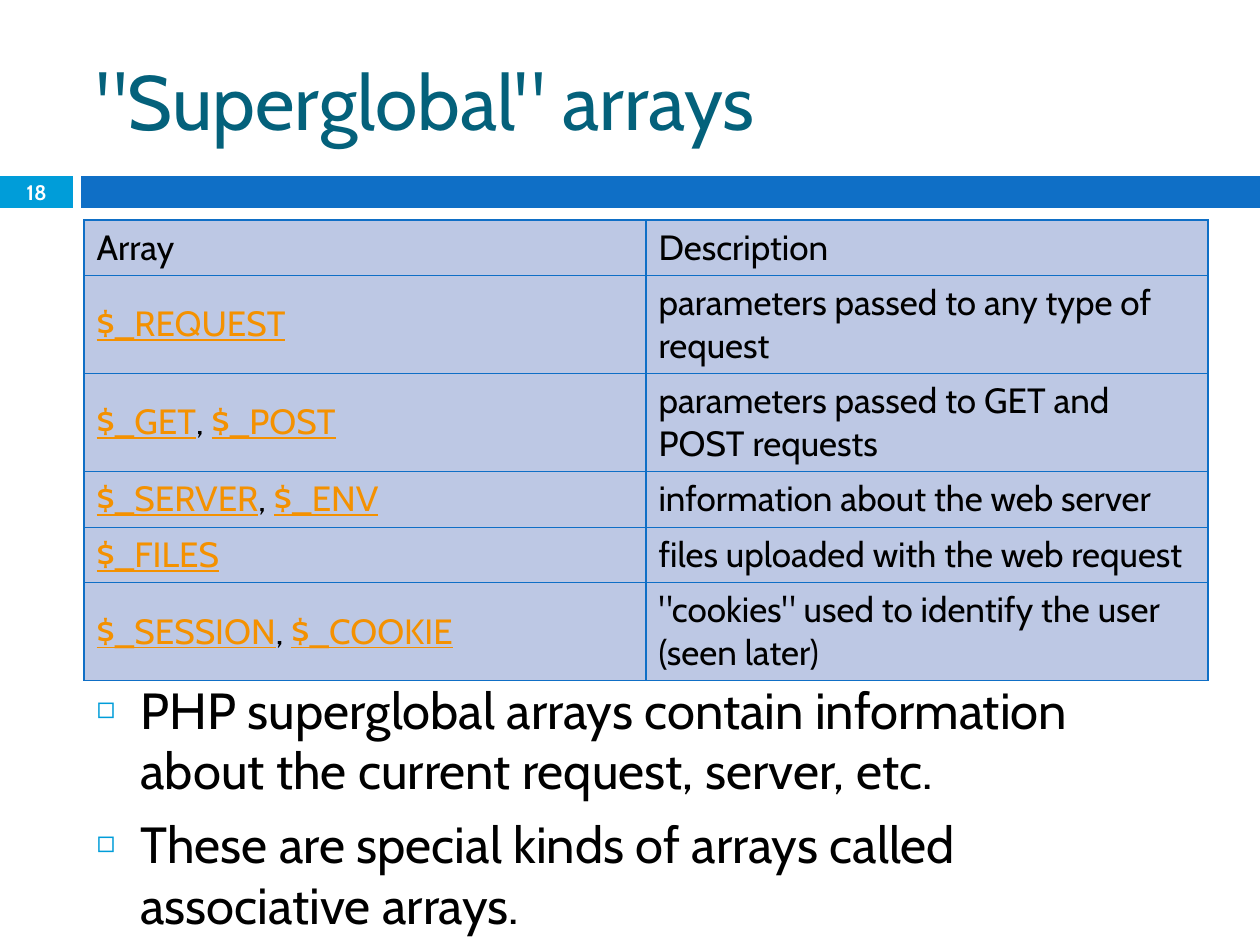
from lxml import etree
from pptx import Presentation
from pptx.dml.color import RGBColor
from pptx.enum.shapes import MSO_SHAPE
from pptx.enum.text import MSO_ANCHOR, MSO_AUTO_SIZE, PP_ALIGN
from pptx.oxml.ns import qn
from pptx.util import Emu, Pt

RECTANGLE = MSO_SHAPE.RECTANGLE
TOP, MIDDLE = MSO_ANCHOR.TOP, MSO_ANCHOR.MIDDLE
LEFT, CENTER = PP_ALIGN.LEFT, PP_ALIGN.CENTER
NO_AUTOFIT = MSO_AUTO_SIZE.NONE
FONT = "Cabin"
COLORS = {
    "title": "04617B",
    "text": "000000",
    "link": "F49100",
    "badge": "009DD9",
    "band": "0F6FC6",
    "cell": "BDC8E4",
    "white": "FFFFFF",
}
ROWS = [
    (["Array"], "Description"),
    (["$_REQUEST"], "parameters passed to any type of request"),
    (["$_GET", "$_POST"], "parameters passed to GET and POST requests"),
    (["$_SERVER", "$_ENV"], "information about the web server"),
    (["$_FILES"], "files uploaded with the web request"),
    (["$_SESSION", "$_COOKIE"], "\"cookies\" used to identify the user (seen later)"),
]
ROW_HEIGHTS = [55, 98, 98, 56, 55, 98]
POINTS = [
    "PHP superglobal arrays contain information about the current request, server, etc.",
    "These are special kinds of arrays called associative arrays.",
]


def px(value):
    """Turn pixels at 126 to the inch into EMU."""
    return Emu(round(value * 914400 / 126))


def color(name):
    """Look up a named colour."""
    return RGBColor.from_string(COLORS[name])


def style(span, size, tint, bold=False, underline=False):
    """Format one run."""
    span.font.name = FONT
    span.font.size = Pt(size)
    span.font.bold = bold
    span.font.underline = underline
    span.font.color.rgb = color(tint)


def place(shape, box):
    """Move a placeholder to a box given in pixels."""
    shape.left, shape.top, shape.width, shape.height = map(px, box)
    shape.text_frame.auto_size = NO_AUTOFIT
    shape.text_frame.word_wrap = True


def add_title(page, box):
    """Fill the title placeholder."""
    title = page.shapes.title
    place(title, box)
    title.text_frame.text = "\"Superglobal\" arrays"
    title.text_frame.vertical_anchor = MIDDLE
    para = title.text_frame.paragraphs[0]
    para.alignment = LEFT
    style(para.runs[0], 44, "title")


def add_bar(page, box, tint):
    """Draw one plain filled bar."""
    bar = page.shapes.add_shape(RECTANGLE, *map(px, box))
    bar.shadow.inherit = False
    bar.fill.solid()
    bar.fill.fore_color.rgb = color(tint)
    bar.line.fill.background()
    return bar


def add_band(page, box):
    """Draw the page-number badge and the band beside it."""
    left, top, width, height = box
    badge_width, gap = 73, 8
    offset = badge_width + gap
    badge = add_bar(page, (left, top, badge_width, height), "badge")
    add_bar(page, (left + offset, top, width - offset, height), "band")
    frame = badge.text_frame
    frame.margin_top = frame.margin_bottom = 0
    frame.vertical_anchor = MIDDLE
    frame.text = "18"
    frame.paragraphs[0].alignment = CENTER
    style(frame.paragraphs[0].runs[0], 12, "white", bold=True)


def add_borders(cell):
    """Outline all four sides of a table cell."""
    properties = cell._tc.get_or_add_tcPr()
    for side in ("lnL", "lnR", "lnT", "lnB"):
        line = etree.SubElement(properties, qn(f"a:{side}"), w=str(Pt(0.79)))
        fill = etree.SubElement(line, qn("a:solidFill"))
        etree.SubElement(fill, qn("a:srgbClr"), val=COLORS["band"])


def fill_cell(cell, words, linked):
    """Write comma-separated words into a cell, as links if asked."""
    add_borders(cell)
    cell.fill.solid()
    cell.fill.fore_color.rgb = color("cell")
    cell.vertical_anchor = MIDDLE
    para = cell.text_frame.paragraphs[0]
    for index, word in enumerate(words):
        if index:
            comma = para.add_run()
            comma.text = ", "
            style(comma, 20, "text")
        span = para.add_run()
        span.text = word
        style(span, 20, "link" if linked else "text", underline=linked)


def add_array_table(page, box):
    """Build the table of superglobal arrays."""
    table = page.shapes.add_table(len(ROWS), 2, *map(px, box)).table
    for column in table.columns:
        column.width = px(box[2] // 2)
    for index, (names, description) in enumerate(ROWS):
        table.rows[index].height = px(ROW_HEIGHTS[index])
        fill_cell(table.cell(index, 0), names, linked=index > 0)
        fill_cell(table.cell(index, 1), [description], linked=False)


def add_bullet(para):
    """Give a paragraph a small hollow square and a hanging indent."""
    properties = para._p.get_or_add_pPr()
    properties.set("marL", str(px(44)))
    properties.set("indent", str(px(-44)))
    tint = etree.SubElement(properties, qn("a:buClr"))
    etree.SubElement(tint, qn("a:srgbClr"), val=COLORS["badge"])
    etree.SubElement(properties, qn("a:buSzPct"), val="60000")
    etree.SubElement(properties, qn("a:buChar"), char="◻")


def add_points(page, box):
    """Fill the body placeholder with bulleted points."""
    body = page.placeholders[1]
    place(body, box)
    frame = body.text_frame
    frame.text = "\n".join(POINTS)
    frame.vertical_anchor = TOP
    for para in frame.paragraphs:
        para.space_before = Pt(7)
        add_bullet(para)
        style(para.runs[0], 29, "text")


def main():
    """Build and save the deck."""
    deck = Presentation()
    deck.slide_width, deck.slide_height = px(1260), px(945)
    page = deck.slides.add_slide(deck.slide_layouts[1])
    add_band(page, (0, 176, 1260, 32))
    add_title(page, (84, 32, 1124, 136))
    add_points(page, (84, 672, 1124, 168))
    add_array_table(page, (84, 220, 1124, sum(ROW_HEIGHTS)))
    deck.save("out.pptx")


if __name__ == "__main__":
    main()
